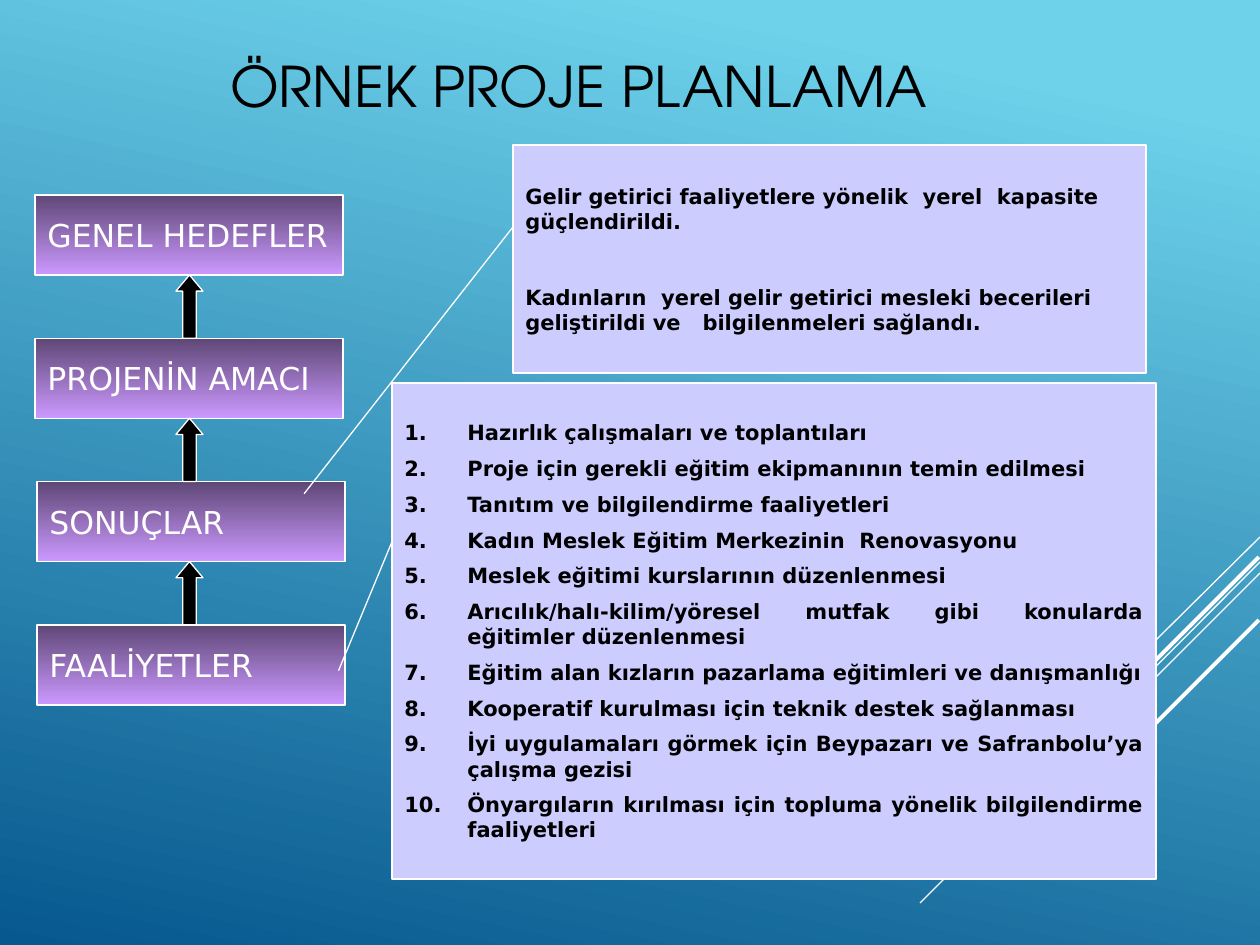
from lxml import etree
from pptx import Presentation
from pptx.dml.color import RGBColor
from pptx.enum.shapes import MSO_CONNECTOR, MSO_SHAPE
from pptx.enum.text import MSO_ANCHOR, PP_ALIGN
from pptx.oxml.ns import qn
from pptx.util import Emu, Pt

RECTANGLE, UP_ARROW = MSO_SHAPE.RECTANGLE, MSO_SHAPE.UP_ARROW
CALLOUT = MSO_SHAPE.LINE_CALLOUT_1
STRAIGHT = MSO_CONNECTOR.STRAIGHT
MIDDLE = MSO_ANCHOR.MIDDLE
LEFT, CENTER, JUSTIFY = PP_ALIGN.LEFT, PP_ALIGN.CENTER, PP_ALIGN.JUSTIFY

WHITE = RGBColor(0xFF, 0xFF, 0xFF)
BLACK = RGBColor(0x00, 0x00, 0x00)
LAVENDER = RGBColor(0xCC, 0xCC, 0xFF)
PLUM = RGBColor(0x5E, 0x47, 0x76)
VIOLET = RGBColor(0xCC, 0x99, 0xFF)
SKY = RGBColor(0x6E, 0xD2, 0xEB)
OCEAN = RGBColor(0x06, 0x58, 0x8E)

BODY_FONT, TITLE_FONT = "DejaVu Sans", "TeX Gyre Adventor"

# Content
TITLE = "ÖRNEK PROJE PLANLAMA"
LEVELS = [  # label, left edge
    ("GENEL HEDEFLER", 35),
    ("PROJENİN AMACI", 35),
    ("SONUÇLAR", 37),
    ("FAALİYETLER", 37),
]
RESULTS = [
    "Gelir getirici faaliyetlere yönelik  yerel  kapasite güçlendirildi.",
    "Kadınların  yerel gelir getirici mesleki becerileri geliştirildi ve   bilgilenmeleri sağlandı.",
]
ACTIVITIES = [
    "Hazırlık çalışmaları ve toplantıları",
    "Proje için gerekli eğitim ekipmanının temin edilmesi",
    "Tanıtım ve bilgilendirme faaliyetleri",
    "Kadın Meslek Eğitim Merkezinin  Renovasyonu",
    "Meslek eğitimi kurslarının düzenlenmesi",
    "Arıcılık/halı-kilim/yöresel mutfak gibi konularda eğitimler düzenlenmesi",
    "Eğitim alan kızların pazarlama eğitimleri ve danışmanlığı",
    "Kooperatif kurulması için teknik destek sağlanması",
    "İyi uygulamaları görmek için Beypazarı ve Safranbolu’ya çalışma gezisi",
    "Önyargıların kırılması için topluma yönelik bilgilendirme faaliyetleri",
]
RAYS = [  # x1, y1, x2, y2, width in points
    (1260, 537, 1155, 641, 0.75),
    (1260, 562, 920, 903, 0.75),
    (1260, 573, 1043, 790, 0.75),
    (1259, 557, 1061, 755, 2.25),
    (1259, 620, 1115, 764, 2.25),
]

# Layout
LEVEL_TOP, LEVEL_W, LEVEL_H, LEVEL_PITCH = 195, 308, 80, 143.3
ARROW_LEFT, ARROW_W = 176, 27
LIST_INDENT = 63


def px(length):
    return Emu(round(length * 914400 / 126))


def paint_gradient(fill, colors, start, angle):
    fill.gradient()
    fill.gradient_angle = angle
    for stop, color, position in zip(fill.gradient_stops, colors, (start, 1)):
        stop.color.rgb = color
        stop.position = position


def add_outlined(kind, box, fill=None, adjustments=()):
    shape = slide.shapes.add_shape(kind, *map(px, box))
    shape.shadow.inherit = False
    for i, value in enumerate(adjustments):
        shape.adjustments[i] = value
    if fill is None:
        paint_gradient(shape.fill, (PLUM, VIOLET), 0, 270)
    else:
        shape.fill.solid()
        shape.fill.fore_color.rgb = fill
    shape.line.color.rgb = WHITE
    shape.line.width = Pt(0.75)
    return shape


def write(shape, lines, color, font, align=LEFT, gap=0, wrap=True):
    frame = shape.text_frame
    frame.word_wrap = wrap
    frame.vertical_anchor = MIDDLE
    for i, line in enumerate(lines):
        paragraph = frame.paragraphs[0] if i == 0 else frame.add_paragraph()
        paragraph.alignment = align
        if i:
            paragraph.space_before = Pt(gap)
        run = paragraph.add_run()
        run.text = line
        run.font.color.rgb = color
        for key, value in font.items():
            setattr(run.font, key, value)


def number(paragraph):
    properties = paragraph._p.get_or_add_pPr()
    properties.set("marL", str(px(LIST_INDENT)))
    properties.set("indent", str(-px(LIST_INDENT)))
    etree.SubElement(properties, qn("a:buFont"), typeface="+mj-lt")
    etree.SubElement(properties, qn("a:buAutoNum"), type="arabicPeriod")


prs = Presentation()
prs.slide_width, prs.slide_height = px(1260), px(945)
slide = prs.slides.add_slide(prs.slide_layouts[6])
paint_gradient(slide.background.fill, (SKY, OCEAN), 0.1, 258)

# Diagonal rays
for x1, y1, x2, y2, width in RAYS:
    ray = slide.shapes.add_connector(STRAIGHT, *map(px, (x1, y1, x2, y2)))
    ray.line.color.rgb = WHITE
    ray.line.width = Pt(width)
    etree.SubElement(ray._element.spPr, qn("a:effectLst"))

# Title
title = slide.shapes.add_textbox(*map(px, (54, 6, 1050, 158)))
write(title, [TITLE], BLACK, {"size": Pt(32), "name": TITLE_FONT}, CENTER)

# Chain of levels, each with an arrow up to the one above
for i, (label, left) in enumerate(LEVELS):
    top = LEVEL_TOP + i * LEVEL_PITCH
    level = add_outlined(RECTANGLE, (left, top, LEVEL_W, LEVEL_H))
    write(level, [label], WHITE, {"size": Pt(18), "name": BODY_FONT}, wrap=False)
    if i:
        arrow_h = LEVEL_PITCH - LEVEL_H
        add_outlined(UP_ARROW, (ARROW_LEFT, top - arrow_h, ARROW_W, arrow_h),
                     BLACK, (0.5, 0.6))

# Callouts for results and activities
detail_font = {"size": Pt(12), "name": BODY_FONT, "bold": True}
results = add_outlined(CALLOUT, (513, 145, 633, 228), LAVENDER,
                       (0.36, 0, 1.53, -0.33))
write(results, RESULTS, BLACK, detail_font, gap=29)

activities = add_outlined(CALLOUT, (392, 383, 764, 496), LAVENDER,
                          (0.32, 0, 0.58, -0.07))
write(activities, ACTIVITIES, BLACK, detail_font, JUSTIFY, gap=6)
for item in activities.text_frame.paragraphs:
    number(item)

prs.save("out.pptx")
